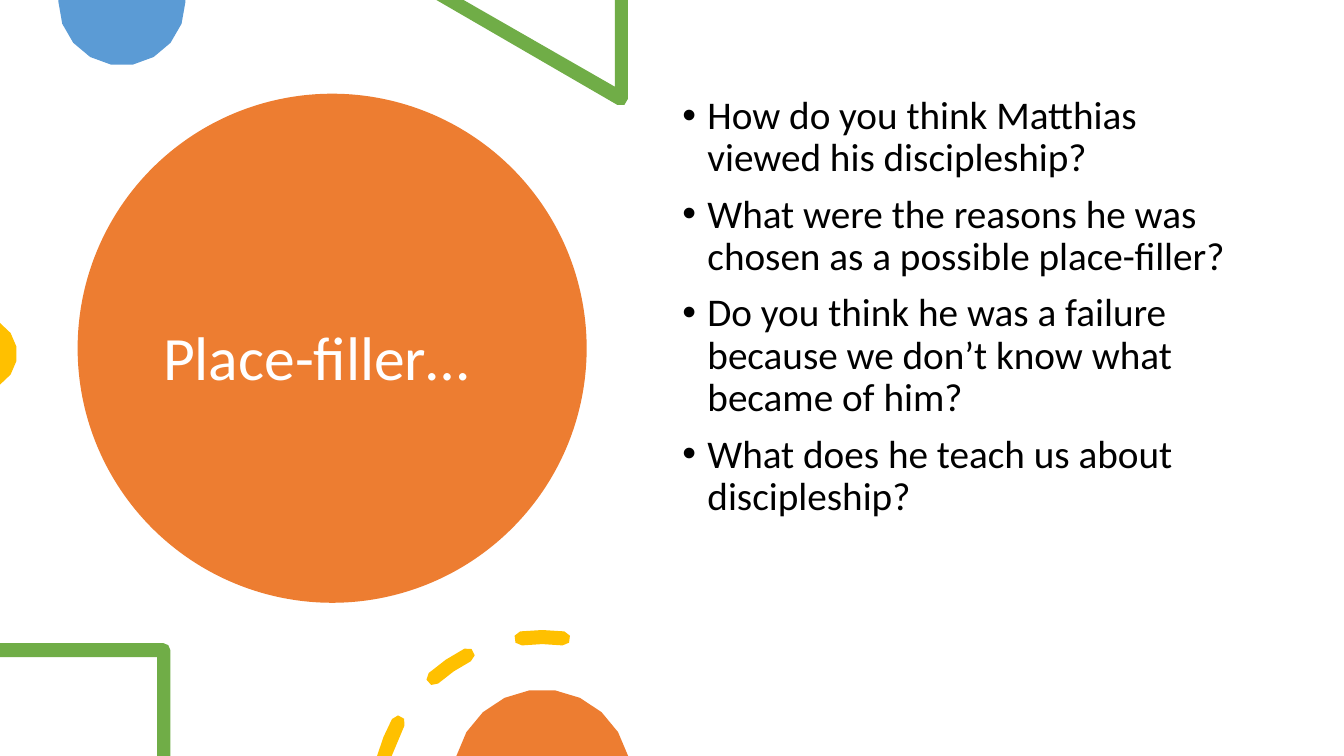
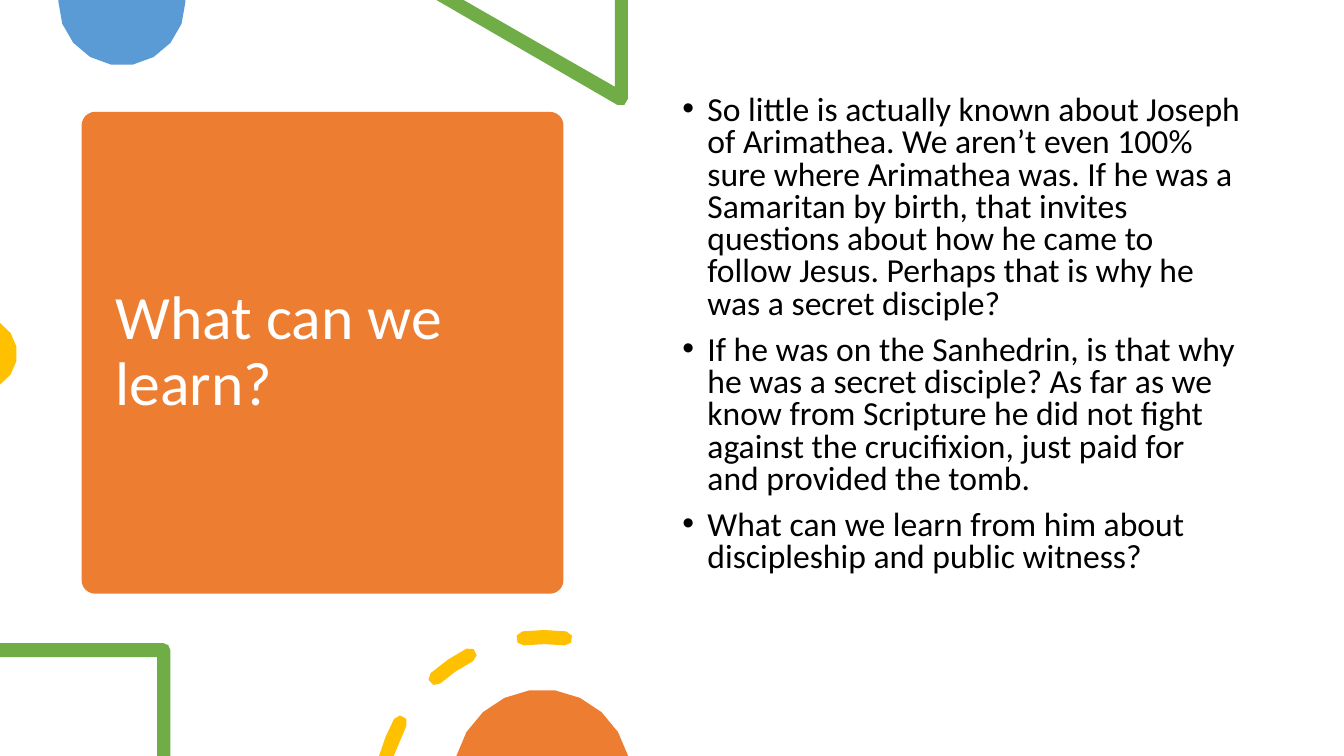
from math import acos, ceil, cos, degrees, radians, sin

from lxml import etree
from pptx import Presentation
from pptx.dml.color import RGBColor
from pptx.enum.shapes import MSO_SHAPE
from pptx.enum.text import MSO_ANCHOR, PP_ALIGN
from pptx.oxml.ns import qn
from pptx.util import Inches, Pt

CIRCLE = MSO_SHAPE.OVAL
ROUNDED = MSO_SHAPE.ROUNDED_RECTANGLE
MIDDLE = MSO_ANCHOR.MIDDLE
TOP = MSO_ANCHOR.TOP
LEFT = PP_ALIGN.LEFT

ORANGE = RGBColor(0xED, 0x7D, 0x31)
BLUE = RGBColor(0x5B, 0x9B, 0xD5)
GREEN = RGBColor(0x70, 0xAD, 0x47)
YELLOW = RGBColor(0xFF, 0xC0, 0x00)
WHITE = RGBColor(0xFF, 0xFF, 0xFF)
BLACK = RGBColor(0x00, 0x00, 0x00)

FONT = "Calibri"
TITLE_SIZE = 44
SLIDE_HEIGHT = 7.5
SLIDE_WIDTH = SLIDE_HEIGHT * 16 / 9
BODY_BOX = (6.67, 0.9, 5.75, 5.35)
BAND = 0.14
ARC_FLATNESS = 0.01

SLIDES = [
    {
        "panel": CIRCLE,
        "panel_box": (0.77, 0.93, 5.05, 5.05),
        "title": "Place-filler…",
        "title_box": (1.52, 1.35, 3.54, 4.45),
        "dash_center": 5.38,
        "size": 28,
        "line_spacing": 0.9,
        "points": [
            "How do you think Matthias viewed his discipleship?",
            "What were the reasons he was chosen as a possible place-filler?",
            "Do you think he was a failure because we don’t know what became of him?",
            "What does he teach us about discipleship?",
        ],
    },
    {
        "panel": ROUNDED,
        "panel_box": (0.81, 1.11, 4.78, 4.78),
        "title": "What can we learn?",
        "title_box": (1.05, 1.22, 4.31, 4.56),
        "dash_center": 5.4,
        "size": 24,
        "line_spacing": 0.8,
        "points": [
            "So little is actually known about Joseph of Arimathea. We aren’t even "
            "100% sure where Arimathea was. If he was a Samaritan by birth, that "
            "invites questions about how he came to follow Jesus. Perhaps that is "
            "why he was a secret disciple?",
            "If he was on the Sanhedrin, is that why he was a secret disciple? As "
            "far as we know from Scripture he did not fight against the "
            "crucifixion, just paid for and provided the tomb.",
            "What can we learn from him about discipleship and public witness?",
        ],
    },
]


def paint(shape, color):
    shape.shadow.inherit = False
    shape.fill.solid()
    shape.fill.fore_color.rgb = color
    shape.line.fill.background()


def arc(center_x, center_y, radius, start, end):
    widest = 2 * degrees(acos(1 - ARC_FLATNESS / radius))
    steps = ceil(abs(end - start) / widest)
    angles = [radians(start + (end - start) * step / steps)
              for step in range(steps + 1)]
    return [(center_x + radius * cos(angle), center_y + radius * sin(angle))
            for angle in angles]


def add_outline(page, left, top, contours, color):
    placed = [[(Inches(left + x), Inches(top + y)) for x, y in contour]
              for contour in contours]
    builder = page.shapes.build_freeform(*placed[0][0], scale=1.0)
    builder.add_line_segments(placed[0][1:], close=True)
    for contour in placed[1:]:
        builder.move_to(*contour[0])
        builder.add_line_segments(contour[1:], close=True)
    paint(builder.convert_to_shape(), color)


def add_half_disc(page, left, top):
    add_outline(page, left, top, [arc(0.63, 0.02, 0.63, 0, 180) + [(0, 0), (1.26, 0)]], BLUE)


def add_triangle(page, left, top):
    tip = arc(1.83, 0.98, 0.07, 0, 120)
    inside = [(0, 0), (0.27, 0), (1.77, 0.86), (1.77, 0), (1.9, 0)]
    add_outline(page, left, top, [tip + inside], GREEN)


def add_edge_disc(page, left, top):
    half_angle = degrees(acos(0.19 / 0.36))
    add_outline(page, left, top, [arc(-0.19, 0.3, 0.36, -half_angle, half_angle)], YELLOW)


def add_frame(page, left, top):
    corner = arc(1.62, 0.07, 0.07, -90, 0)
    inside = [(1.69, 1.12), (1.56, 1.12), (1.56, BAND), (0, BAND), (0, 0)]
    add_outline(page, left, top, [corner + inside], GREEN)


def add_dashes(page, center_x, top):
    radius = 1.63
    outer, inner = radius + BAND / 2, radius - BAND / 2
    center_y = outer
    drop = top + center_y - SLIDE_HEIGHT

    def cap(angle, first, last):
        middle = radians(angle)
        points = arc(radius * cos(middle), center_y + radius * sin(middle),
                     BAND / 2, angle + first, angle + last)
        return points[1:-1]

    def dash(start, end):
        return (arc(0, center_y, outer, start, end) + cap(end, 0, 180)
                + arc(0, center_y, inner, end, start) + cap(start, 180, 360))

    def cut_angle(band_radius):
        return degrees(acos(drop / band_radius)) + 90

    cut_end = -151.3
    cut_dash = (arc(0, center_y, outer, -cut_angle(outer), cut_end)
                + cap(cut_end, 0, 180)
                + arc(0, center_y, inner, cut_end, -cut_angle(inner)))
    add_outline(page, center_x, top,
                [cut_dash, dash(-131.5, -117), dash(-97.4, -82.6)], YELLOW)


def add_bottom_disc(page, left, top):
    radius = 0.88
    half_angle = degrees(acos((radius - 0.66) / radius))
    add_outline(page, left, top,
                [arc(0.86, radius, radius, -90 - half_angle, -90 + half_angle)], ORANGE)


def add_decorations(page, dash_center):
    add_half_disc(page, 0.58, 0)
    add_triangle(page, 4.33, 0)
    add_edge_disc(page, 0, 3.21)
    add_frame(page, 0, 6.38)
    add_dashes(page, dash_center, 6.25)
    add_bottom_disc(page, 4.52, 6.84)


def add_panel(page, kind, box):
    panel = page.shapes.add_shape(kind, *map(Inches, box))
    if kind == ROUNDED:
        panel.adjustments[0] = 0.028
    paint(panel, ORANGE)


def add_bullet(para):
    properties = para._p.get_or_add_pPr()
    properties.set("marL", str(Inches(0.25)))
    properties.set("indent", str(-Inches(0.25)))
    etree.SubElement(properties, qn("a:buFont")).set("typeface", "Arial")
    etree.SubElement(properties, qn("a:buChar")).set("char", "•")


def add_text(page, box, lines, size, color, anchor, line_spacing=0.9, bulleted=False):
    frame = page.shapes.add_textbox(*map(Inches, box)).text_frame
    frame.word_wrap = True
    frame.vertical_anchor = anchor
    for index, line in enumerate(lines):
        para = frame.paragraphs[0] if index == 0 else frame.add_paragraph()
        para.text = line
        para.alignment = LEFT
        para.line_spacing = line_spacing
        if bulleted:
            para.space_before = Pt(10)
            add_bullet(para)
        para.font.name = FONT
        para.font.size = Pt(size)
        para.font.color.rgb = color


def add_slide(deck, content):
    page = deck.slides.add_slide(deck.slide_layouts[6])
    page.background.fill.solid()
    page.background.fill.fore_color.rgb = WHITE
    add_panel(page, content["panel"], content["panel_box"])
    add_text(page, content["title_box"], [content["title"]], TITLE_SIZE, WHITE, MIDDLE)
    add_decorations(page, content["dash_center"])
    add_text(page, BODY_BOX, content["points"], content["size"], BLACK, TOP,
             content["line_spacing"], bulleted=True)


def main():
    deck = Presentation()
    deck.slide_width = Inches(SLIDE_WIDTH)
    deck.slide_height = Inches(SLIDE_HEIGHT)
    for content in SLIDES:
        add_slide(deck, content)
    deck.save("out.pptx")


if __name__ == "__main__":
    main()
